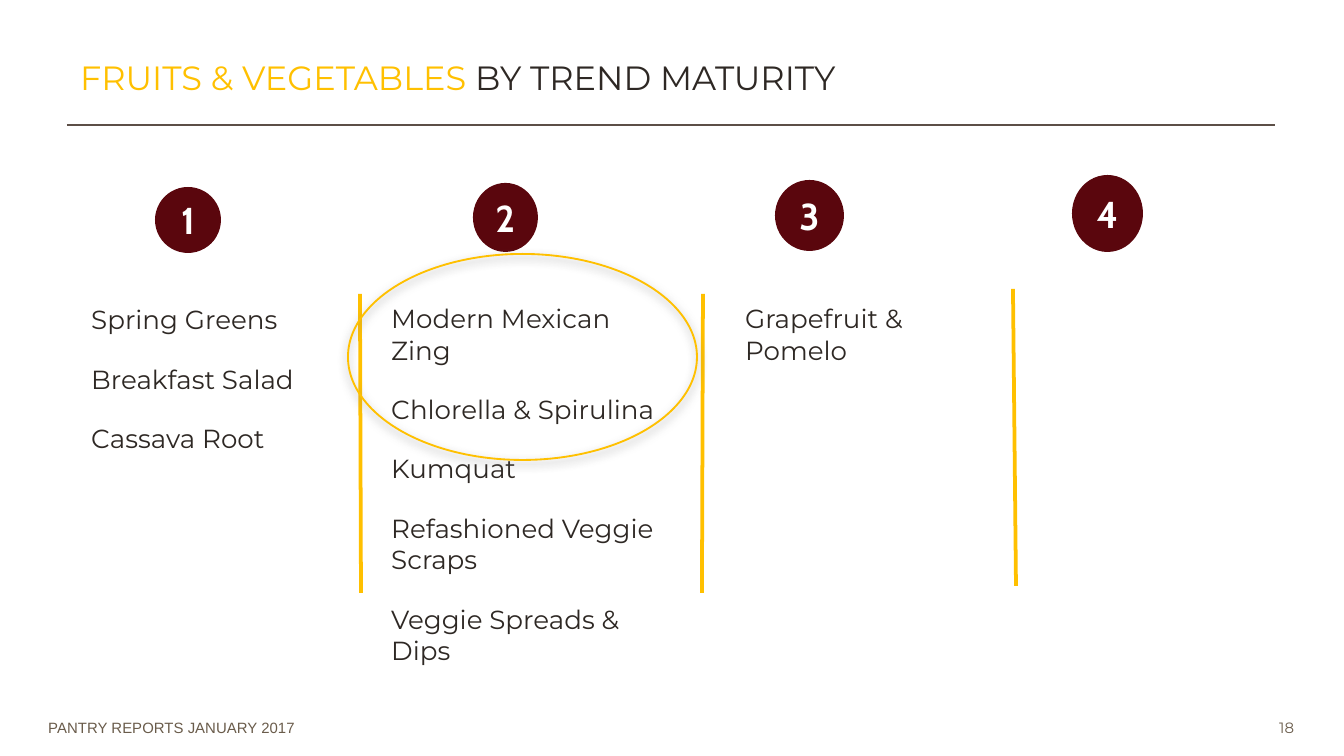
from lxml.etree import SubElement
from pptx import Presentation
from pptx.dml.color import RGBColor
from pptx.enum.shapes import MSO_CONNECTOR, MSO_SHAPE
from pptx.enum.text import MSO_ANCHOR, PP_ALIGN
from pptx.oxml.ns import qn
from pptx.util import Pt

PX = 914400 / 134.4
COLORS = {
    "gold": "FFC000",
    "maroon": "5A060D",
    "ink": "2E2824",
    "brown": "6A5C4B",
    "rule": "5C4F47",
    "white": "FFFFFF",
    "shadow": "808080",
}
TITLE = {"size": Pt(18), "name": "Montserrat"}
BADGE = {"size": Pt(20), "name": "Cabin", "bold": True}
ITEM = {"size": Pt(14), "name": "Montserrat"}
FOOTER = {"size": Pt(8), "name": "Arial"}
PAGE = {"size": Pt(8), "name": "Montserrat"}
SPACING = {"space_before": Pt(9), "space_after": Pt(6)}

# Badge boxes and divider ends (bottom, top) are relative to the column box.
COLUMNS = [
    {
        "box": (78, 297, 282, 296),
        "badge": (77, -110, 66, 66),
        "divider": (283, 296, 282, -3),
        "items": ["Spring Greens", "Breakfast Salad", "Cassava Root"],
    },
    {
        "box": (378, 296, 305, 332),
        "badge": (95, -113, 65, 69),
        "divider": (324, 297, 325, -2),
        "items": [
            "Modern Mexican Zing",
            "Chlorella & Spirulina",
            "Kumquat",
            "Refashioned Veggie Scraps",
            "Veggie Spreads & Dips",
        ],
    },
    {
        "box": (732, 296, 254, 327),
        "badge": (43, -116, 69, 71),
        "divider": (284, 290, 281, -7),
        "items": ["Grapefruit & Pomelo"],
    },
    {"box": (1030, 296, 254, 327), "badge": (42, -121, 71, 77)},
]


def emu(*lengths):
    return [round(v * PX) for v in lengths]


def rgb(name):
    return RGBColor.from_string(COLORS[name])


def set_attrs(obj, values):
    for name, value in values.items():
        setattr(obj, name, value)


def add_run(p, text, font, color):
    r = p.add_run()
    r.text = text
    set_attrs(r.font, font)
    r.font.color.rgb = rgb(color)


def add_text(s, box, wrap=True):
    tf = s.shapes.add_textbox(*emu(*box)).text_frame
    tf.word_wrap = wrap
    return tf


def add_line(s, ends, color, width):
    sp = s.shapes.add_connector(MSO_CONNECTOR.STRAIGHT, *emu(*ends))
    sp.line.color.rgb = rgb(color)
    sp.line.width = Pt(width)
    SubElement(sp._element.spPr, qn("a:effectLst"))


def add_ellipse(s, box):
    sp = s.shapes.add_shape(MSO_SHAPE.OVAL, *emu(*box))
    sp.shadow.inherit = False
    return sp


def add_header(s, box):
    x, y, w, h = box
    tf = add_text(s, (x, y, w, h - 21))
    tf.vertical_anchor = MSO_ANCHOR.BOTTOM
    p = tf.paragraphs[0]
    add_run(p, "FRUITS & VEGETABLES ", TITLE, "gold")
    add_run(p, "BY TREND MATURITY", TITLE, "ink")
    add_line(s, (x, y + h, x + w - 2, y + h), "rule", 0.75)


def add_badge(s, box, number):
    sp = add_ellipse(s, box)
    sp.fill.solid()
    sp.fill.fore_color.rgb = rgb("maroon")
    sp.line.fill.background()
    tf = sp.text_frame
    tf.vertical_anchor = MSO_ANCHOR.MIDDLE
    tf.word_wrap = False
    p = tf.paragraphs[0]
    p.alignment = PP_ALIGN.CENTER
    add_run(p, str(number), BADGE, "white")


def add_column(s, box, number, badge, divider=None, items=()):
    x, y = box[:2]
    bx, by, bw, bh = badge
    add_badge(s, (x + bx, y + by, bw, bh), number)
    if divider:
        x1, y1, x2, y2 = divider
        add_line(s, (x + x1, y + y1, x + x2, y + y2), "gold", 2)
    if items:
        tf = add_text(s, box)
        for i, item in enumerate(items):
            p = tf.add_paragraph() if i else tf.paragraphs[0]
            set_attrs(p, SPACING)
            add_run(p, item, ITEM, "ink")


def add_highlight(s, box):
    """Ring the leading items with an outlined, softly shadowed ellipse."""
    sp = add_ellipse(s, box)
    sp.fill.background()
    sp.line.color.rgb = rgb("gold")
    sp.line.width = Pt(1)
    effects = sp._element.spPr.find(qn("a:effectLst"))
    shadow = SubElement(effects, qn("a:outerShdw"), blurRad=str(Pt(5)),
                        dist=str(Pt(2)), dir="5400000", rotWithShape="0")
    color = SubElement(shadow, qn("a:srgbClr"), val=COLORS["shadow"])
    SubElement(color, qn("a:alpha"), val="75000")


def add_footer(s, box):
    x, y, w, h = box
    tf = add_text(s, (x, y, w - 103, h))
    add_run(tf.paragraphs[0], "PANTRY REPORTS JANUARY 2017", FOOTER, "brown")
    tf = add_text(s, (x + w - 48, y, 48, h), wrap=False)
    add_run(tf.paragraphs[0], "18", PAGE, "brown")


def main():
    prs = Presentation()
    prs.slide_width, prs.slide_height = emu(1344, 756)
    s = prs.slides.add_slide(prs.slide_layouts[6])
    add_footer(s, (35, 712, 1279, 31))
    add_header(s, (67, 42, 1210, 83))
    for number, column in enumerate(COLUMNS, 1):
        add_column(s, number=number, **column)
    add_highlight(s, (348, 254, 349, 206))
    prs.save("out.pptx")


if __name__ == "__main__":
    main()
